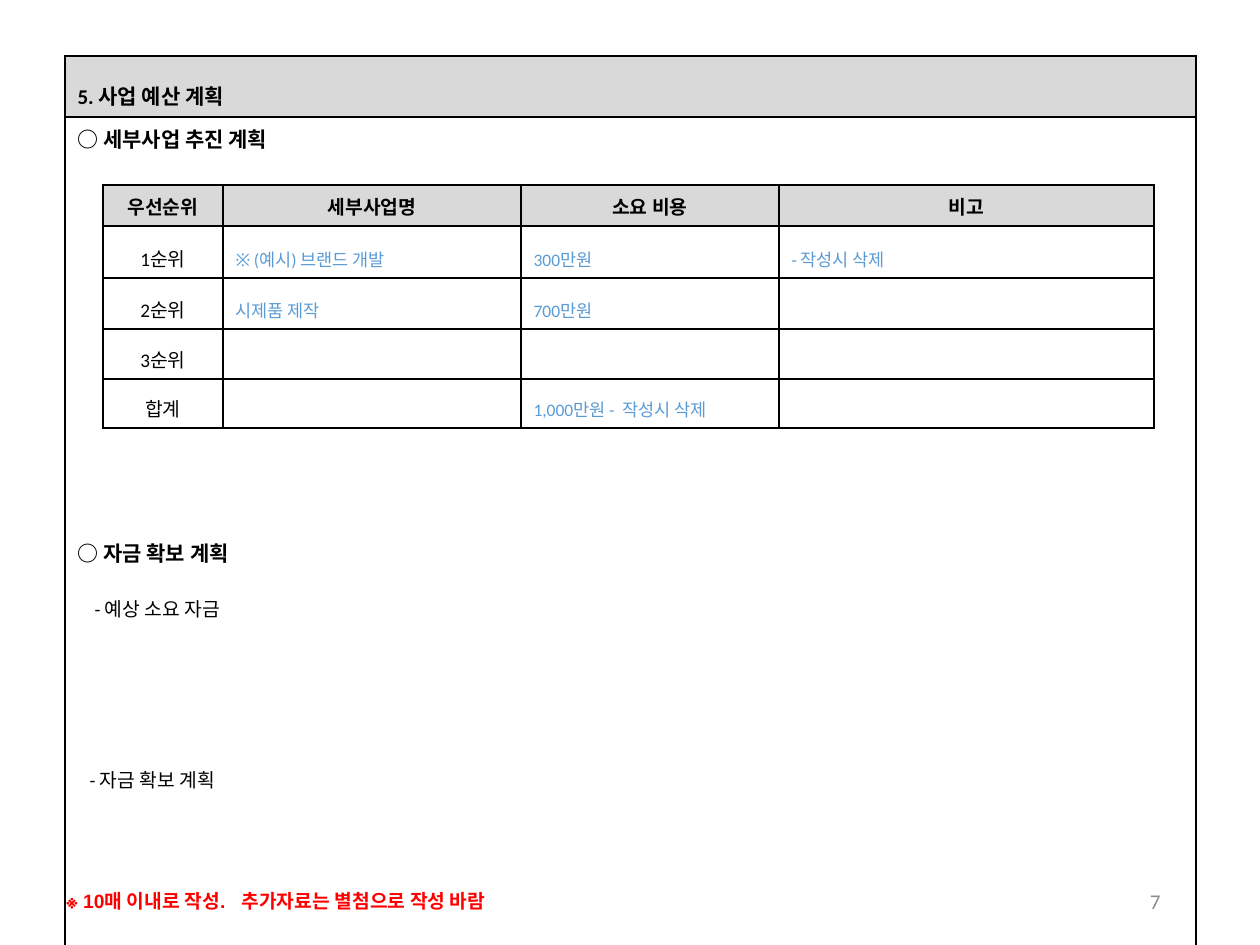
"""Build the business budget plan slide."""
from dataclasses import dataclass

from lxml import etree
from pptx import Presentation
from pptx import util as u
from pptx.dml.color import RGBColor
from pptx.enum import text
from pptx.oxml import ns

HEADING = "5. 사업 예산 계획"
SECTIONS = [
    ("○ 세부사업 추진 계획", "section", 0, 0),
    ("○ 자금 확보 계획", "section", 383, 0),
    ("- 예상 소요 자금", "label", 26, 17),
    ("- 자금 확보 계획", "label", 143, 12),
]
COLUMNS = ["우선순위", "세부사업명", "소요 비용", "비고"]
BUDGET = [
    ["1순위", "※ (예시) 브랜드 개발", "300만원", "- 작성시 삭제"],
    ["2순위", "시제품 제작", "700만원", ""],
    ["3순위", "", "", ""],
    ["합계", "", "1,000만원 -  작성시 삭제", ""],
]
FOOTNOTE = "※ 10매 이내로 작성.   추가자료는 별첨으로 작성 바람"
PAGE_NUMBER = "7"

PAGE = (1260, 945)
FRAME = (65, 56, [1131], [61, 828])
GRID = (103, 185, [120, 298, 258, 375], [41, 52, 51, 50, 49])
FOOTNOTE_BOX = (54, 883, 1111, 37)
NUMBER_BOX = (890, 876, 283, 50)


@dataclass(frozen=True)
class Style:
    size: int
    color: str = "000000"
    bold: bool = False
    font: str = "Calibri"


class Theme:
    line = "000000"
    band = "D9D9D9"
    east_asian = "Noto Sans CJK KR"
    styles = {
        "heading": Style(12, bold=True),
        "section": Style(12, bold=True, font=east_asian),
        "label": Style(11),
        "column": Style(11, bold=True),
        "example": Style(10, "5B9BD5"),
        "footnote": Style(11, "FF0000", True, "Arial"),
        "number": Style(12, "8C8C8C"),
    }


def px(length):
    return u.Emu(length * 914400 // 126)


def write(para, words, style_name, align=text.PP_ALIGN.LEFT):
    style = Theme.styles[style_name]
    para.alignment = align
    if not words:
        para._p.get_or_add_endParaRPr().set("sz", str(style.size * 100))
        return
    span = para.add_run()
    span.text = words
    span.font.size = u.Pt(style.size)
    span.font.bold = style.bold
    span.font.name = style.font
    span.font.color.rgb = RGBColor.from_string(style.color)
    east = etree.SubElement(span.font._element, ns.qn("a:ea"))
    east.set("typeface", Theme.east_asian)


def set_borders(cell, hidden=""):
    properties = cell._tc.get_or_add_tcPr()
    for side in "LRTB":
        line = etree.SubElement(properties, ns.qn(f"a:ln{side}"), w=str(u.Pt(1)))
        if side in hidden:
            etree.SubElement(line, ns.qn("a:noFill"))
        else:
            fill = etree.SubElement(line, ns.qn("a:solidFill"))
            etree.SubElement(fill, ns.qn("a:srgbClr"), val=Theme.line)


def add_grid(page, place, open_bottom=False):
    left, top, widths, heights = place
    frame = page.shapes.add_table(
        len(heights), len(widths), px(left), px(top), px(sum(widths)), px(sum(heights)))
    table = frame.table
    table.first_row = table.horz_banding = False
    for column, width in zip(table.columns, widths):
        column.width = px(width)
    for index, height in enumerate(heights):
        table.rows[index].height = px(height)
        last = index == len(heights) - 1
        for cell in table.rows[index].cells:
            set_borders(cell, "B" if open_bottom and last else "")
            cell.vertical_anchor = text.MSO_ANCHOR.BOTTOM
            if index == 0:
                cell.fill.solid()
                cell.fill.fore_color.rgb = RGBColor.from_string(Theme.band)
            else:
                cell.fill.background()
    return table


def add_frame(page):
    table = add_grid(page, FRAME, open_bottom=True)
    write(table.cell(0, 0).text_frame.paragraphs[0], HEADING, "heading")
    body = table.cell(1, 0)
    body.vertical_anchor = text.MSO_ANCHOR.TOP
    for index, (words, style, gap, indent) in enumerate(SECTIONS):
        frame = body.text_frame
        para = frame.add_paragraph() if index else frame.paragraphs[0]
        para.space_before = u.Pt(round(gap * 72 / 126))
        para._p.get_or_add_pPr().set("marL", str(px(indent)))
        write(para, words, style)


def add_budget(page):
    table = add_grid(page, GRID)
    for row, values in enumerate([COLUMNS, *BUDGET]):
        for column, words in enumerate(values):
            style = "column" if row == 0 else "label" if column == 0 else "example"
            align = text.PP_ALIGN.LEFT if style == "example" else text.PP_ALIGN.CENTER
            write(table.cell(row, column).text_frame.paragraphs[0], words, style, align)


def add_note(page, place, words, style, align, anchor):
    box = page.shapes.add_textbox(*map(px, place))
    box.text_frame.word_wrap = True
    box.text_frame.vertical_anchor = anchor
    write(box.text_frame.paragraphs[0], words, style, align)


def main():
    deck = Presentation()
    deck.slide_width, deck.slide_height = map(px, PAGE)
    page = deck.slides.add_slide(deck.slide_layouts[6])
    add_note(page, NUMBER_BOX, PAGE_NUMBER, "number",
             text.PP_ALIGN.RIGHT, text.MSO_ANCHOR.MIDDLE)
    add_frame(page)
    add_budget(page)
    add_note(page, FOOTNOTE_BOX, FOOTNOTE, "footnote",
             text.PP_ALIGN.LEFT, text.MSO_ANCHOR.TOP)
    deck.save("out.pptx")


if __name__ == "__main__":
    main()
